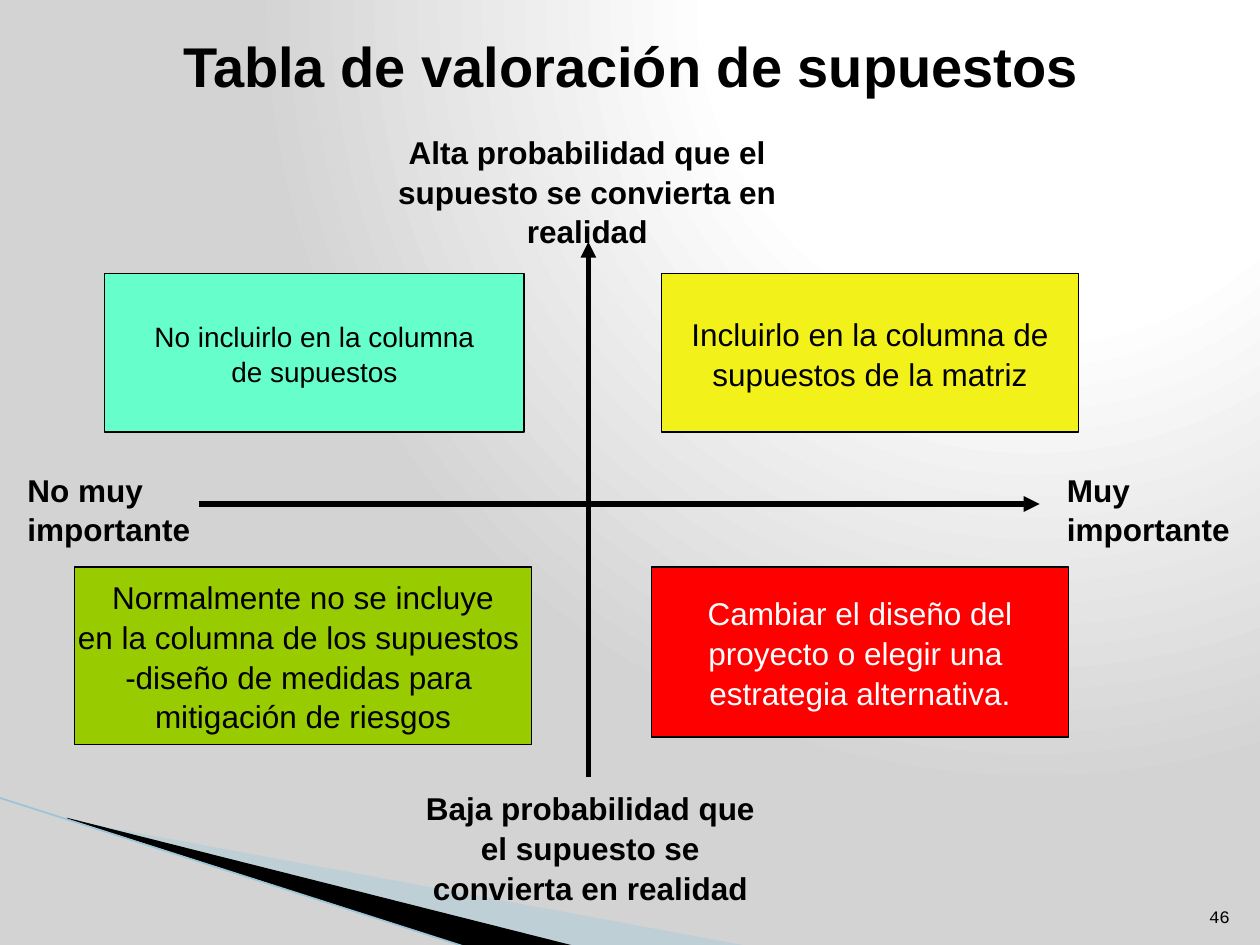
from lxml.etree import SubElement
from pptx import Presentation
from pptx.dml.color import RGBColor
from pptx.enum.shapes import MSO_CONNECTOR, MSO_SHAPE
from pptx.enum.text import MSO_ANCHOR, PP_ALIGN
from pptx.oxml import parse_xml
from pptx.oxml.ns import nsdecls, qn
from pptx.util import Emu, Pt

PX = 9144  # 100 px to the inch
COLORS = {
    "black": "000000", "white": "FFFFFF", "gray": "D3D3D3",
    "pale_blue": "A0CBDC", "edge_blue": "97C5D8",
    "mint": "66FFCC", "yellow": "F2F21A", "green": "99CC00", "red": "FF0000",
}


def write(shape, lines, size, color="black", bold=False, align=PP_ALIGN.CENTER,
          anchor=MSO_ANCHOR.TOP, wrap=True, font="Arial", spacing=1.05):
    frame = shape.text_frame
    frame.word_wrap = wrap
    frame.vertical_anchor = anchor
    frame.text = "\n".join(lines)
    for paragraph in frame.paragraphs:
        paragraph.alignment = align
        paragraph.line_spacing = spacing
        paragraph.font.name = font
        paragraph.font.size = Pt(size)
        paragraph.font.bold = bold
        paragraph.font.color.rgb = RGBColor.from_string(COLORS[color])


def add_line(x1, y1, x2, y2, color, width, arrow=False):
    line = slide.shapes.add_connector(
        MSO_CONNECTOR.STRAIGHT, *(Emu(v * PX) for v in (x1, y1, x2, y2)))
    line.line.color.rgb = RGBColor.from_string(COLORS[color])
    line.line.width = Pt(width)
    if arrow:
        SubElement(line.line._get_or_add_ln(), qn("a:tailEnd"), type="triangle")
    SubElement(line._element.spPr, qn("a:effectLst"))


presentation = Presentation()
presentation.slide_width = Emu(1000 * PX)
presentation.slide_height = Emu(750 * PX)
slide = presentation.slides.add_slide(presentation.slide_layouts[5])

# Background: radial gradient from the upper right
slide.background.fill.solid()
background = slide._element.cSld.find(qn("p:bg")).find(qn("p:bgPr"))
stops = "".join(
    f'<a:gs pos="{position * 1000}"><a:srgbClr val="{COLORS[color]}"/></a:gs>'
    for position, color in ((0, "white"), (40, "white"), (100, "gray")))
background.replace(background[0], parse_xml(
    f'<a:gradFill {nsdecls("a")} rotWithShape="1"><a:gsLst>{stops}</a:gsLst>'
    '<a:path path="circle"><a:fillToRect l="65000" t="0" r="0" b="98000"/></a:path>'
    '</a:gradFill>'))

# Corner decoration
for color, alpha, points in (
    ("pale_blue", 40, [(55, 651), (595, 751), (456, 751), (55, 650)]),
    ("black", 100, [(53, 649), (457, 751), (372, 752), (54, 650)]),
):
    builder = slide.shapes.build_freeform(*points[0], scale=PX)
    builder.add_line_segments(points[1:], close=True)
    wedge = builder.convert_to_shape()
    wedge.shadow.inherit = False
    wedge.fill.solid()
    wedge.fill.fore_color.rgb = RGBColor.from_string(COLORS[color])
    wedge.line.fill.background()
    if alpha < 100:
        fill_color = wedge._element.spPr.find(qn("a:solidFill"))[0]
        SubElement(fill_color, qn("a:alpha"), val=str(alpha * 1000))
add_line(-1, 633, 371, 752, "edge_blue", 0.95)

# Title
title = slide.shapes.title
title.left, title.top, title.width, title.height = (
    Emu(v * PX) for v in (51, -11, 900, 125))
write(title, ["Tabla de valoración de supuestos"], 32, bold=True,
      anchor=MSO_ANCHOR.MIDDLE, spacing=1.0)

# Axes
add_line(467, 617, 467, 192, "black", 3, arrow=True)
add_line(158, 400, 825, 400, "black", 3, arrow=True)

# Axis labels
for box, text, align in (
    ((295, 99, 342, 101),
     "Alta probabilidad que el supuesto se convierta en realidad", PP_ALIGN.CENTER),
    ((319, 620, 299, 101),
     "Baja probabilidad que el supuesto se convierta en realidad", PP_ALIGN.CENTER),
    ((12, 367, 157, 71), "No muy importante", PP_ALIGN.LEFT),
    ((837, 367, 167, 71), "Muy importante", PP_ALIGN.LEFT),
):
    label = slide.shapes.add_textbox(*(Emu(v * PX) for v in box))
    write(label, [text], 18, bold=True, align=align)

# Quadrants
for box, fill, color, size, lines in (
    ((83, 217, 333, 126), "mint", "black", 16,
     ["No incluirlo en la columna", "de supuestos"]),
    ((525, 217, 331, 126), "yellow", "black", 18,
     ["Incluirlo en la columna de", "supuestos de la matriz"]),
    ((59, 450, 363, 141), "green", "black", 18,
     ["Normalmente no se incluye", "en la columna de los supuestos ",
      "-diseño de medidas para ", "mitigación de riesgos"]),
    ((517, 450, 331, 135), "red", "white", 18,
     ["Cambiar el diseño del", "proyecto o elegir una ",
      "estrategia alternativa."]),
):
    quadrant = slide.shapes.add_shape(
        MSO_SHAPE.RECTANGLE, *(Emu(v * PX) for v in box))
    quadrant.shadow.inherit = False
    quadrant.fill.solid()
    quadrant.fill.fore_color.rgb = RGBColor.from_string(COLORS[fill])
    quadrant.line.color.rgb = RGBColor.from_string(COLORS["black"])
    quadrant.line.width = Pt(0.75)
    write(quadrant, lines, size, color, anchor=MSO_ANCHOR.MIDDLE, wrap=False)

# Page number
number = slide.shapes.add_textbox(*(Emu(v * PX) for v in (946, 701, 40, 40)))
write(number, ["46"], 10, align=PP_ALIGN.RIGHT, anchor=MSO_ANCHOR.BOTTOM,
      font="Courier New", spacing=1.0)

presentation.save("out.pptx")
